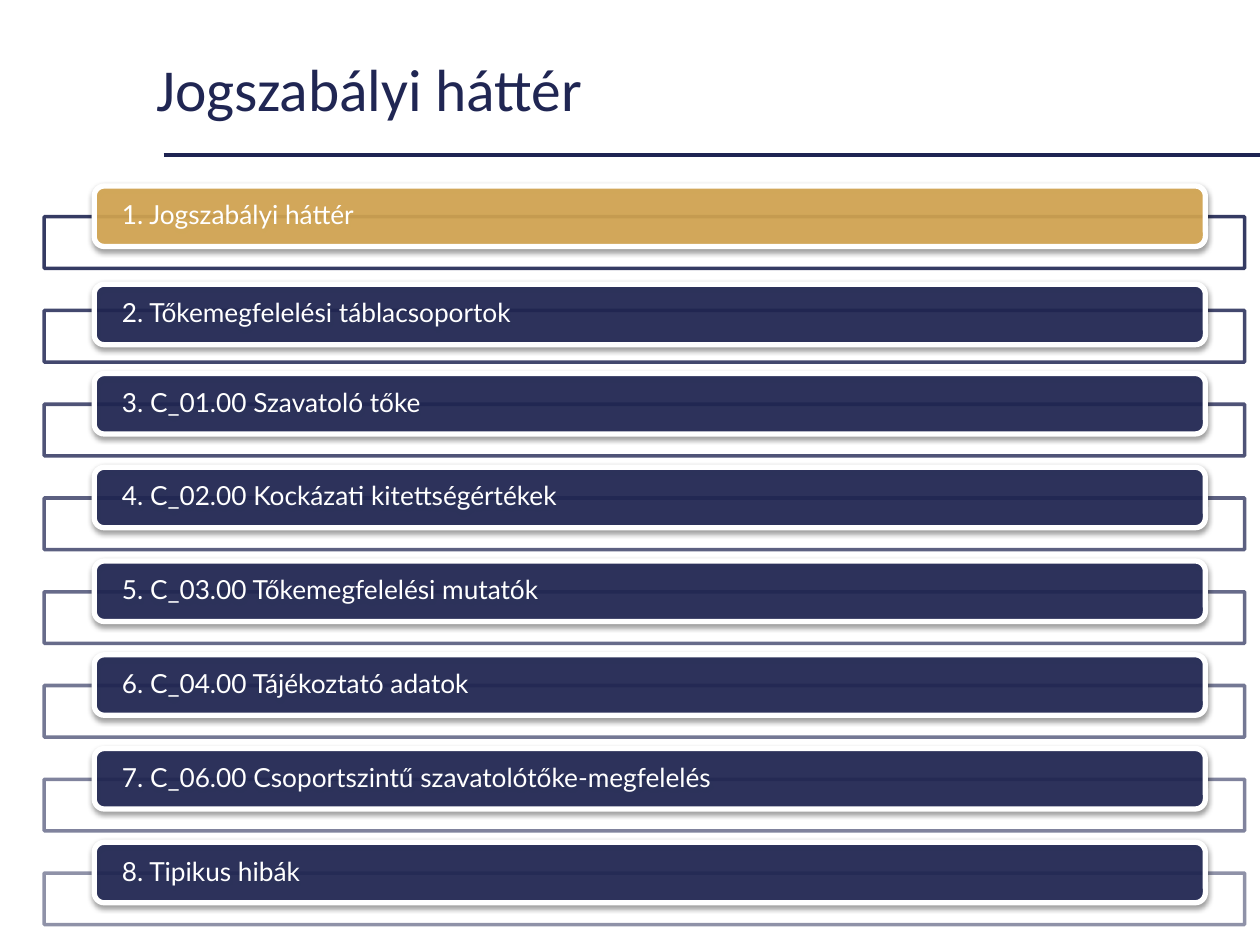
from lxml.etree import SubElement
from pptx import Presentation
from pptx.dml.color import RGBColor
from pptx.enum.shapes import MSO_CONNECTOR, MSO_SHAPE
from pptx.enum.text import MSO_ANCHOR, PP_ALIGN
from pptx.oxml.ns import qn
from pptx.util import Cm, Pt

NAVY = "202653"
GOLD = "D7A852"
WHITE = "FFFFFF"
CHAPTERS = [
    "1. Jogszabályi háttér",
    "2. Tőkemegfelelési táblacsoportok",
    "3. C_01.00 Szavatoló tőke",
    "4. C_02.00 Kockázati kitettségértékek",
    "5. C_03.00 Tőkemegfelelési mutatók",
    "6. C_04.00 Tájékoztató adatok",
    "7. C_06.00 Csoportszintű szavatolótőke-megfelelés",
    "8. Tipikus hibák",
]
FIRST_TOP = 4.37
PITCH = 1.89
BAR_RISE = 0.62
SECOND_BAR_RISE = 0.53


def color(value):
    """Turn a hex string into a colour."""
    return RGBColor.from_string(value)


def paint(fill, value, opacity=100):
    """Give a fill a solid colour with an opacity in percent."""
    fill.solid()
    fill.fore_color.rgb = color(value)
    if opacity < 100:
        solid = fill._xPr.find(qn("a:solidFill"))
        SubElement(solid[0], qn("a:alpha"), val=str(round(opacity * 1000)))


def write(box, text, font, size, value):
    """Put one left-aligned, vertically centred line of text in a box."""
    frame = box.text_frame
    frame.text = text
    frame.word_wrap = True
    frame.vertical_anchor = MSO_ANCHOR.MIDDLE
    para = frame.paragraphs[0]
    para.alignment = PP_ALIGN.LEFT
    para.line_spacing = 0.9
    span = para.runs[0]
    span.font.name = font
    span.font.size = Pt(size)
    span.font.color.rgb = color(value)


def add_title(page, text):
    """Add the slide title and the rule under it."""
    box = page.shapes.add_textbox(Cm(2.9), Cm(0.81), Cm(20.7), Cm(2.11))
    write(box, text, "Calibri", 34, NAVY)
    rule = page.shapes.add_connector(
        MSO_CONNECTOR.STRAIGHT, Cm(3.3), Cm(3.12), Cm(25.4), Cm(3.12))
    rule.line.color.rgb = color("1E2452")
    rule.line.width = Pt(2.25)
    SubElement(rule._element.spPr, qn("a:effectLst"))


def add_panel(page, kind, left, top, width, height):
    """Add a preset shape without a shadow."""
    panel = page.shapes.add_shape(kind, Cm(left), Cm(top), Cm(width), Cm(height))
    panel.shadow.inherit = False
    return panel


def add_frame(page, top, opacity):
    """Add the outlined rectangle behind a chapter bar."""
    frame = add_panel(page, MSO_SHAPE.RECTANGLE, 0.89, top, 24.2, 1.04)
    paint(frame.fill, WHITE, 90)
    frame.line.width = Pt(2)
    paint(frame.line.fill, NAVY, opacity)


def add_shadow(shape):
    """Give a shape a soft shadow that falls straight down."""
    effects = shape._element.spPr.find(qn("a:effectLst"))
    shadow = SubElement(effects, qn("a:outerShdw"), blurRad=str(Pt(3.1)),
                        dist=str(Pt(1.6)), dir="5400000", rotWithShape="0")
    black = SubElement(shadow, qn("a:srgbClr"), val="000000")
    SubElement(black, qn("a:alpha"), val="38000")


def add_bar(page, top, text, value):
    """Add the rounded bar that holds a chapter name."""
    bar = add_panel(page, MSO_SHAPE.ROUNDED_RECTANGLE, 1.9, top, 22.4, 1.22)
    paint(bar.fill, value, 90)
    bar.line.width = Pt(3)
    paint(bar.line.fill, WHITE)
    add_shadow(bar)
    write(bar, text, "Lato", 15, WHITE)
    frame = bar.text_frame
    frame.margin_left, frame.margin_right = Cm(0.5), Cm(1)
    frame.margin_top = frame.margin_bottom = 0


def main():
    """Build the slide and save it."""
    deck = Presentation()
    deck.slide_width, deck.slide_height = Cm(25.4), Cm(19.05)
    page = deck.slides.add_slide(deck.slide_layouts[6])
    add_title(page, "Jogszabályi háttér")
    for index, chapter in enumerate(CHAPTERS):
        top = FIRST_TOP + index * PITCH
        rise = SECOND_BAR_RISE if index == 1 else BAR_RISE
        add_frame(page, top, 90 - 40 * index / (len(CHAPTERS) - 1))
        add_bar(page, top - rise, chapter, GOLD if index == 0 else NAVY)
    deck.save("out.pptx")


if __name__ == "__main__":
    main()
